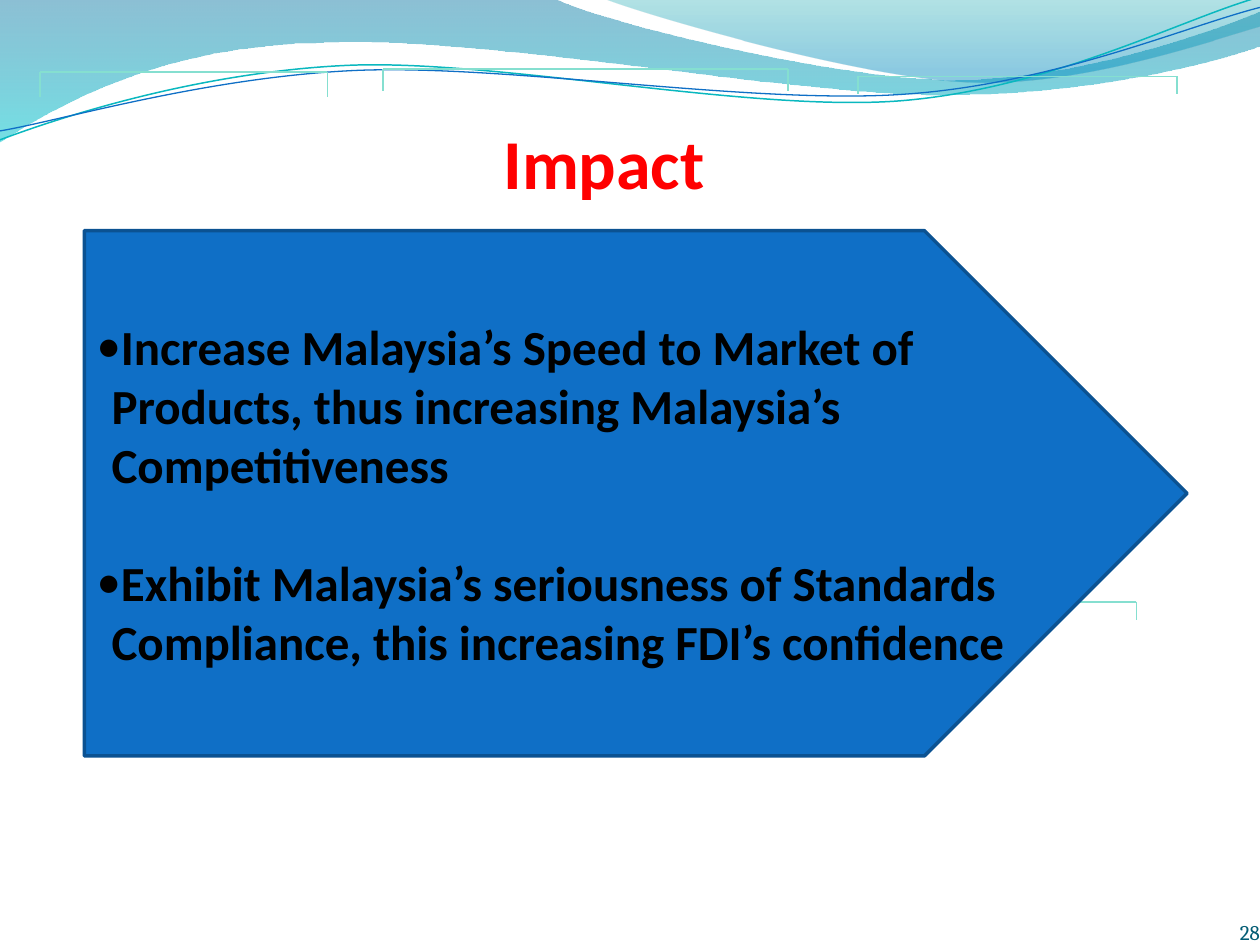
from dataclasses import dataclass

from lxml import etree
from pptx import Presentation, util as u
from pptx.dml.color import RGBColor
from pptx.enum import shapes, text
from pptx.oxml.ns import qn


@dataclass(frozen=True)
class Theme:
    heading: str = "FF0000"
    body: str = "000000"
    arrow: str = "0F6FC6"
    arrow_edge: str = "0B5292"
    bracket: str = "85DFD0"
    teal_line: str = "0AB8BF"
    number: str = "045D75"
    font: str = "Calibri"
    number_font: str = "Cambria"
    heading_size: int = 40
    body_size: int = 28
    number_size: int = 12
    back_wave: tuple = ((0, "0074A1", 45), (1, "00C6CF", 55))
    front_wave: tuple = ((0, "00A1A9", 30), (0.8, "008BBF", 45))


BACK_WAVE = [
    [(0, -0.03)], [(11.18, -0.03)],
    [(12.09, 0.43), (16.87, 1.6), (19.25, 1.6)],
    [(21.67, 1.6), (24.33, 0.66), (25.4, 0.23)], [(25.43, 0.91)],
    [(24.97, 1.12), (22.1, 1.93), (18.95, 1.91)],
    [(15.8, 1.91), (9.7, 0.71), (6.53, 0.86)],
    [(3.28, 0.89), (1.17, 2.11), (-0.03, 2.87)],
]
FRONT_WAVE = [
    [(12.17, -0.03)],
    [(12.93, 0.28), (17.32, 1.57), (19.53, 1.65)],
    [(21.74, 1.75), (24.41, 0.81), (25.4, 0.53)], [(25.4, 0)],
]
TEAL_CURVE = [
    [(-0.05, 2.22)],
    [(1.19, 1.82), (4.02, 1.04), (7.05, 1.05)],
    [(10.05, 1.07), (15.02, 2.37), (18.08, 2.29)],
    [(21.13, 2.2), (23.86, 0.91), (25.41, 0.55)],
]
BLUE_CURVE = [
    [(-0.04, 2.04)],
    [(1.16, 1.9), (4.17, 1.15), (7.2, 1.16)],
    [(10.25, 1.18), (15.13, 2.23), (18.19, 2.16)],
    [(21.21, 2.1), (23.93, 1.06), (25.45, 0.75)],
]
CURVE_TILT = 357.3
BRACKETS = [
    (7.72, 15.88, 1.39, 1.83),
    (0.81, 6.6, 1.45, 1.96),
    (17.3, 23.72, 1.54, 1.9),
    (16.51, 22.91, 12.13, 12.5),
]
IMPACTS = [
    "Increase Malaysia’s Speed to Market of Products, thus increasing Malaysia’s Competitiveness",
    "Exhibit Malaysia’s seriousness of Standards Compliance, this increasing FDI’s confidence",
]


class SlideWriter:
    def __init__(self, slide, theme):
        self.slide = slide
        self.theme = theme

    def stroke(self, line, color, width):
        line.color.rgb = RGBColor.from_string(color)
        line.width = u.Pt(width)

    def style(self, paragraph, font, size, color, bold, align):
        paragraph.alignment = align
        paragraph.font.name = font
        paragraph.font.size = u.Pt(size)
        paragraph.font.bold = bold
        paragraph.font.color.rgb = RGBColor.from_string(color)

    def hang(self, paragraph, indent):
        properties = paragraph._p.get_or_add_pPr()
        properties.set("marL", str(u.Cm(indent)))
        properties.set("indent", str(-u.Cm(indent)))
        return properties

    def frame(self, shape, anchor, left_inset=0):
        frame = shape.text_frame
        frame.word_wrap = True
        frame.auto_size = text.MSO_AUTO_SIZE.NONE
        frame.vertical_anchor = anchor
        frame.margin_left = u.Cm(left_inset)
        frame.margin_top = frame.margin_right = frame.margin_bottom = 0
        return frame

    def outline(self, segments, closed):
        start, *rest = [(u.Cm(x), u.Cm(y)) for segment in segments for x, y in segment]
        builder = self.slide.shapes.build_freeform(*start)
        builder.add_line_segments(rest, close=closed)
        shape = builder.convert_to_shape()
        shape.shadow.inherit = False
        steps = iter(list(shape._element.iter(qn("a:lnTo"))))
        for segment in segments[1:]:
            first, *others = [next(steps) for _ in segment]
            if others:
                first.tag = qn("a:cubicBezTo")
                for step in others:
                    first.append(step[0])
                    step.getparent().remove(step)
        return shape

    def wave(self, segments, stops):
        shape = self.outline(segments, True)
        shape.line.fill.background()
        shape.fill.gradient()
        shape.fill.gradient_angle = 270
        for stop, (position, color, _) in zip(shape.fill.gradient_stops, stops):
            stop.position = position
            stop.color.rgb = RGBColor.from_string(color)
        colors = shape._element.spPr.iter(qn("a:srgbClr"))
        for color, (_, _, opacity) in zip(colors, stops):
            etree.SubElement(color, qn("a:alpha"), val=str(opacity * 1000))

    def curve(self, segments, color, width):
        shape = self.outline(segments, False)
        shape.rotation = CURVE_TILT
        shape.fill.background()
        self.stroke(shape.line, color, width)

    def bracket(self, left, right, top, bottom):
        edges = [(left, top, right, top), (left, top, left, bottom), (right, top, right, bottom)]
        for edge in edges:
            connector = self.slide.shapes.add_connector(
                shapes.MSO_CONNECTOR.STRAIGHT, *map(u.Cm, edge))
            self.stroke(connector.line, self.theme.bracket, 1)
            etree.SubElement(connector._element.spPr, qn("a:effectLst"))

    def title(self, words, left, top, width, height):
        heading = self.slide.shapes.title
        heading.left, heading.top = u.Cm(left), u.Cm(top)
        heading.width, heading.height = u.Cm(width), u.Cm(height)
        frame = self.frame(heading, text.MSO_ANCHOR.MIDDLE, 0.25)
        frame.text = words
        paragraph = frame.paragraphs[0]
        self.style(paragraph, self.theme.font, self.theme.heading_size,
                   self.theme.heading, True, text.PP_ALIGN.CENTER)
        self.hang(paragraph, 0.46)

    def arrow(self, items, left, top, width, height):
        shape = self.slide.shapes.add_shape(
            shapes.MSO_SHAPE.PENTAGON, *map(u.Cm, (left, top, width, height)))
        shape.shadow.inherit = False
        shape.fill.solid()
        shape.fill.fore_color.rgb = RGBColor.from_string(self.theme.arrow)
        self.stroke(shape.line, self.theme.arrow_edge, 2)
        frame = shape.text_frame
        frame.word_wrap = True
        frame.vertical_anchor = text.MSO_ANCHOR.MIDDLE
        frame.text = "\n".join(items)
        for index, paragraph in enumerate(frame.paragraphs):
            self.style(paragraph, self.theme.font, self.theme.body_size,
                       self.theme.body, True, text.PP_ALIGN.LEFT)
            paragraph.space_before = u.Pt(34 if index else 0)
            properties = self.hang(paragraph, 0.3)
            for tag, attributes in (("a:buFont", {"typeface": self.theme.font}),
                                    ("a:buChar", {"char": "•"})):
                bullet = properties.makeelement(qn(tag), attributes)
                properties.insert_element_before(bullet, "a:tabLst", "a:defRPr", "a:extLst")

    def page_number(self, number, left, top, width, height):
        corner = self.slide.shapes.add_textbox(*map(u.Cm, (left, top, width, height)))
        frame = self.frame(corner, text.MSO_ANCHOR.BOTTOM)
        frame.text = number
        self.style(frame.paragraphs[0], self.theme.number_font, self.theme.number_size,
                   self.theme.number, False, text.PP_ALIGN.RIGHT)


def main():
    deck = Presentation()
    deck.slide_width, deck.slide_height = u.Cm(25.4), u.Cm(19.05)
    theme = Theme()
    writer = SlideWriter(deck.slides.add_slide(deck.slide_layouts[5]), theme)
    writer.wave(BACK_WAVE, theme.back_wave)
    writer.wave(FRONT_WAVE, theme.front_wave)
    writer.curve(TEAL_CURVE, theme.teal_line, 0.85)
    writer.curve(BLUE_CURVE, theme.arrow, 0.75)
    for bracket in BRACKETS:
        writer.bracket(*bracket)
    writer.title("Impact", 8.89, 2.97, 6.32, 0.58)
    writer.arrow(IMPACTS, 1.7, 4.65, 22.23, 10.59)
    writer.page_number("28", 19.48, 18.03, 5.92, 1.02)
    deck.save("out.pptx")


if __name__ == "__main__":
    main()
